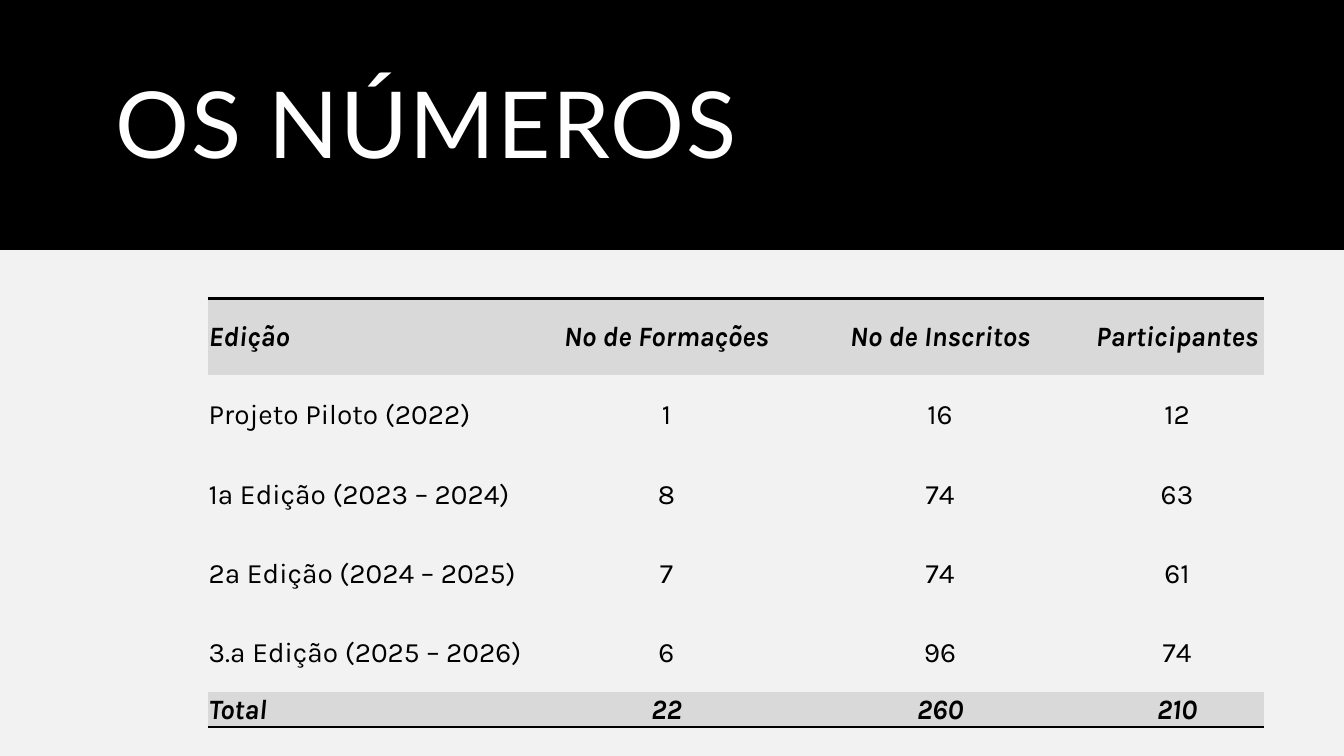
"""Build the slide with the numbers of each training edition."""
from dataclasses import dataclass

from lxml import etree
from pptx import Presentation
from pptx.dml.color import RGBColor
from pptx.enum.shapes import MSO_SHAPE
from pptx.enum.text import MSO_ANCHOR, PP_ALIGN
from pptx.oxml.ns import qn
from pptx.util import Inches, Pt

RECTANGLE = MSO_SHAPE.RECTANGLE
MIDDLE = MSO_ANCHOR.MIDDLE
LEFT, CENTER = PP_ALIGN.LEFT, PP_ALIGN.CENTER
BLACK, WHITE, PAPER, BAND = "000000", "FFFFFF", "F2F2F2", "D9D9D9"
COLUMN_WIDTHS = (3.32, 2.46, 2.97, 1.73)


@dataclass
class TableRow:
    texts: tuple[str, ...]
    height: float = 0.79
    emphasis: bool = False
    ruled_side: str = ""


ROWS = (
    TableRow(("Edição", "Nº de Formações", "Nº de Inscritos", "Participantes"), 0.76, True, "T"),
    TableRow(("Projeto Piloto (2022)", "1", "16", "12")),
    TableRow(("1ª Edição (2023 – 2024)", "8", "74", "63")),
    TableRow(("2ª Edição (2024 – 2025)", "7", "74", "61")),
    TableRow(("3.ª Edição (2025 – 2026)", "6", "96", "74"), 0.78),
    TableRow(("Total", "22", "260", "210"), 0.33, True, "B"),
)


def color(value: str) -> RGBColor:
    return RGBColor.from_string(value)


def set_borders(cell, ruled_side: str) -> None:
    properties = cell._tc.get_or_add_tcPr()
    for position, side in enumerate("LRTB"):
        ruled = side == ruled_side
        line = etree.Element(qn(f"a:ln{side}"), w=str(Pt(2) if ruled else 0))
        fill = etree.SubElement(line, qn("a:solidFill" if ruled else "a:noFill"))
        if ruled:
            etree.SubElement(fill, qn("a:srgbClr"), val=BLACK)
        properties.insert(position, line)


def fill_cell(cell, text: str, row: TableRow, alignment: PP_ALIGN) -> None:
    cell.text_frame.text = text
    cell.vertical_anchor = MIDDLE
    cell.margin_left = cell.margin_right = cell.margin_top = Inches(0.01)
    cell.margin_bottom = 0
    paragraph = cell.text_frame.paragraphs[0]
    paragraph.alignment = alignment
    font = paragraph.runs[0].font
    font.name, font.size = "Karla", Pt(20)
    font.bold = font.italic = row.emphasis
    font.color.rgb = color(BLACK)
    if row.emphasis:
        cell.fill.solid()
        cell.fill.fore_color.rgb = color(BAND)
    else:
        cell.fill.background()
    set_borders(cell, row.ruled_side)


def add_header(page) -> None:
    banner = page.shapes.add_shape(RECTANGLE, 0, 0, Inches(13.33), Inches(2.48))
    banner.shadow.inherit = False
    banner.fill.solid()
    banner.fill.fore_color.rgb = color(BLACK)
    banner.line.fill.background()

    title = page.shapes.add_textbox(Inches(1.05), Inches(0.35), Inches(11.23), Inches(1.86))
    frame = title.text_frame
    frame.word_wrap = True
    frame.vertical_anchor = MIDDLE
    frame.text = "OS NÚMEROS"
    paragraph = frame.paragraphs[0]
    paragraph.line_spacing = 0.9
    span = paragraph.runs[0]
    span.font.name, span.font.size = "Lato", Pt(66)
    span.font.color.rgb = color(WHITE)
    span._r.get_or_add_rPr().set("spc", "120")


def add_numbers(page) -> None:
    table = page.shapes.add_table(
        len(ROWS), len(COLUMN_WIDTHS), Inches(2.06), Inches(2.96),
        Inches(sum(COLUMN_WIDTHS)), Inches(sum(row.height for row in ROWS)),
    ).table
    table.first_row = table.horz_banding = False
    for column, width in zip(table.columns, COLUMN_WIDTHS):
        column.width = Inches(width)
    for row_index, row in enumerate(ROWS):
        table.rows[row_index].height = Inches(row.height)
        for column_index, text in enumerate(row.texts):
            alignment = CENTER if column_index else LEFT
            fill_cell(table.cell(row_index, column_index), text, row, alignment)


def main() -> None:
    deck = Presentation()
    deck.slide_width, deck.slide_height = Inches(13.33), Inches(7.5)
    page = deck.slides.add_slide(deck.slide_layouts[6])
    page.background.fill.solid()
    page.background.fill.fore_color.rgb = color(PAPER)
    add_header(page)
    add_numbers(page)
    deck.save("out.pptx")


if __name__ == "__main__":
    main()
